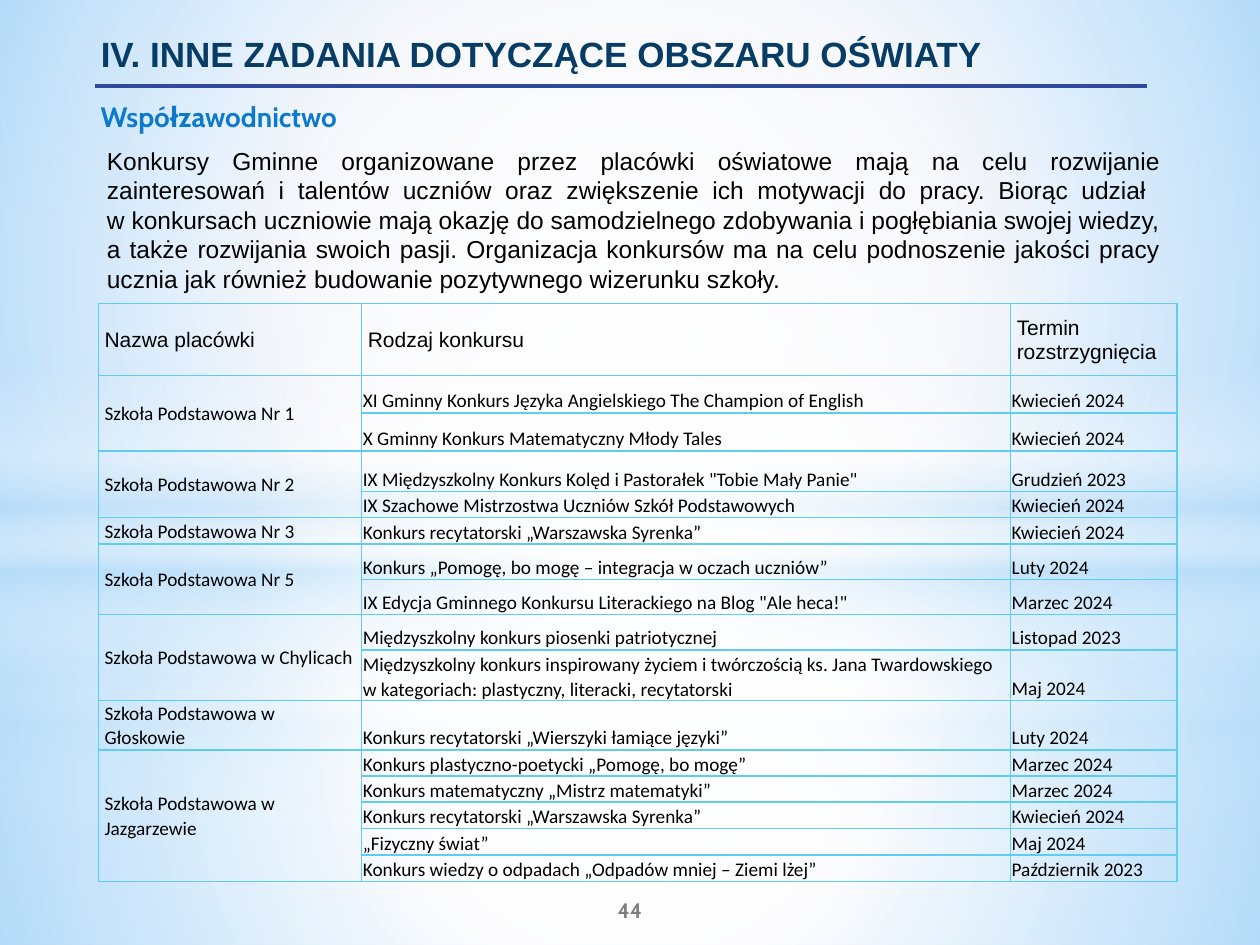
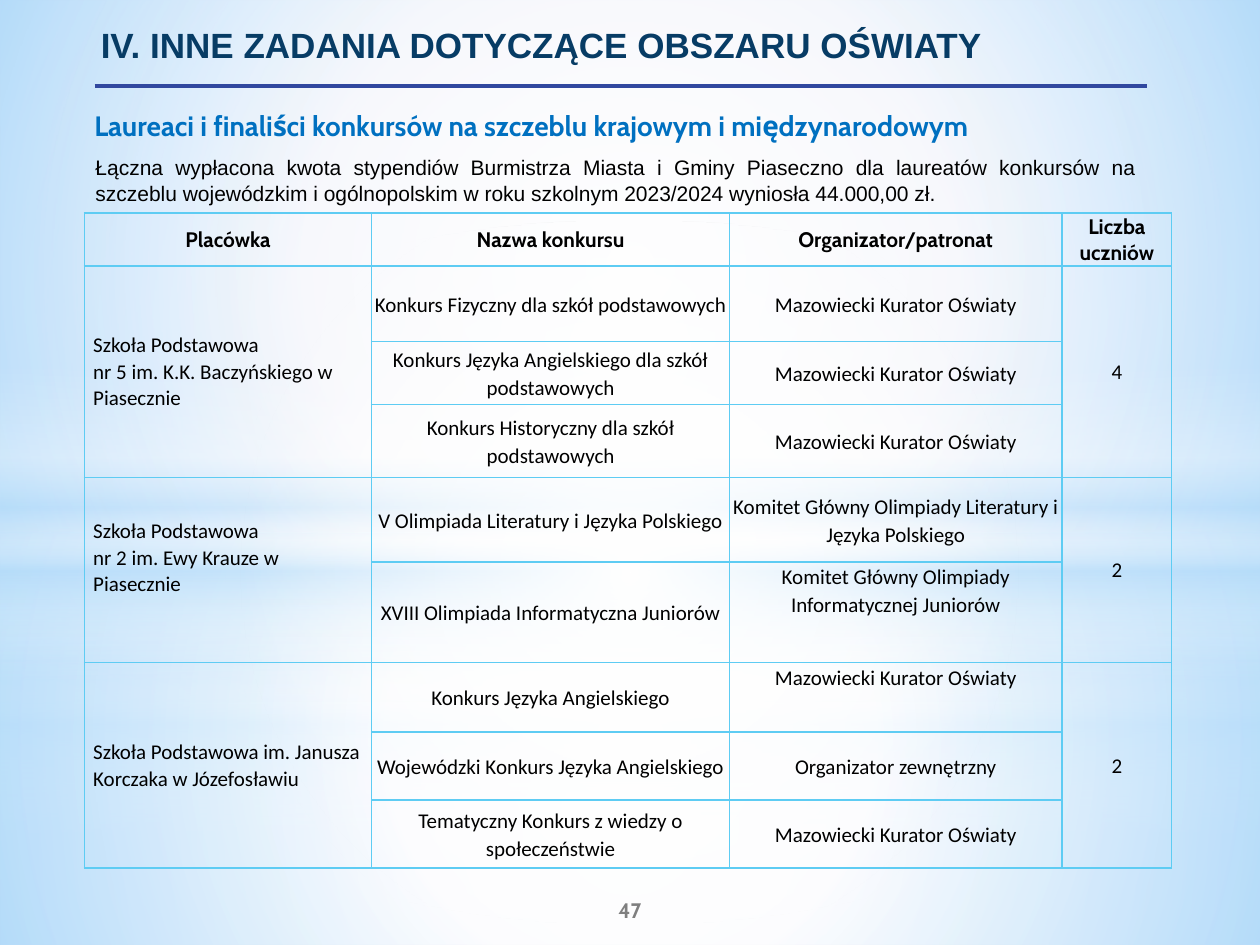
from pptx import Presentation
from pptx.dml.color import RGBColor
from pptx.enum.shapes import MSO_CONNECTOR as Connector, MSO_SHAPE as Shape
from pptx.enum.text import MSO_ANCHOR as Anchor, PP_ALIGN as Align
from pptx.oxml import parse_xml
from pptx.oxml.ns import nsdecls
from pptx.util import Inches, Pt

COLORS = {
    "base": "CAD1EE", "white": "FFFFFF", "sky": "B4DCFA", "title": "073C65",
    "rule": "31489F", "contest": "0D79CA", "laureate": "0070C0",
    "text": "000000", "number": "7F7F7F", "border": "5ECCF3",
}
TITLE = "IV. INNE ZADANIA DOTYCZĄCE OBSZARU OŚWIATY"

RADIAL = ('<a:path path="circle"><a:fillToRect l="50000" t="50000" '
          'r="50000" b="50000"/></a:path>')
LINEAR = '<a:lin ang="5400000" scaled="0"/>'
FLOOR = [(0, "white", 91), (37, "white", 76), (100, "sky", 79)]
CEILING = [(0, "white", 89), (48, "white", 62), (100, "sky", 79)]
WAVE = [(0, "white", 0), (29, "white", 30), (45, "sky", 40),
        (55, "white", 26), (65, "sky", 60), (100, "white", 0)]

LOOSE = {"side": 0.05, "spacing": 1.04}
WIDE = {"side": 0.07, "spacing": 1.04}
TIGHT = {"side": 0.01, "top": 0.01, "spacing": 1.07, "after": 8}

CONTEST_INTRO = (
    "Konkursy Gminne organizowane przez placówki oświatowe mają na celu rozwijanie "
    "zainteresowań i talentów uczniów oraz zwiększenie ich motywacji do pracy. "
    "Biorąc udział \nw konkursach uczniowie mają okazję do samodzielnego zdobywania "
    "i pogłębiania swojej wiedzy, a także rozwijania swoich pasji. Organizacja "
    "konkursów ma na celu podnoszenie jakości pracy ucznia jak również budowanie "
    "pozytywnego wizerunku szkoły.")
CONTEST_HEADER = ["Nazwa placówki", "Rodzaj konkursu", "Termin rozstrzygnięcia"]
CONTEST_HEIGHTS = [0.57, 0.3, 0.3, 0.32, 0.21, 0.21, 0.28, 0.28, 0.28, 0.4,
                   0.39, 0.19, 0.21, 0.21, 0.21, 0.21]
CONTESTS = [
    ("Szkoła Podstawowa Nr 1", [
        ("XI Gminny Konkurs Języka Angielskiego The Champion of English", "Kwiecień 2024"),
        ("X Gminny Konkurs Matematyczny Młody Tales", "Kwiecień 2024")]),
    ("Szkoła Podstawowa Nr 2", [
        ('IX Międzyszkolny Konkurs Kolęd i Pastorałek "Tobie Mały Panie"', "Grudzień 2023"),
        ("IX Szachowe Mistrzostwa Uczniów Szkół Podstawowych", "Kwiecień 2024")]),
    ("Szkoła Podstawowa Nr 3", [
        ("Konkurs recytatorski „Warszawska Syrenka”", "Kwiecień 2024")]),
    ("Szkoła Podstawowa Nr 5", [
        ("Konkurs „Pomogę, bo mogę – integracja w oczach uczniów”", "Luty 2024"),
        ('IX Edycja Gminnego Konkursu Literackiego na Blog "Ale heca!"', "Marzec 2024")]),
    ("Szkoła Podstawowa w Chylicach", [
        ("Międzyszkolny konkurs piosenki patriotycznej", "Listopad 2023"),
        ("Międzyszkolny konkurs inspirowany życiem i twórczością ks. Jana Twardowskiego "
         "w kategoriach: plastyczny, literacki, recytatorski", "Maj 2024")]),
    ("Szkoła Podstawowa w Głoskowie", [
        ("Konkurs recytatorski „Wierszyki łamiące języki”", "Luty 2024")]),
    ("Szkoła Podstawowa w Jazgarzewie", [
        ("Konkurs plastyczno-poetycki „Pomogę, bo mogę”", "Marzec 2024"),
        ("Konkurs matematyczny „Mistrz matematyki”", "Marzec 2024"),
        ("Konkurs recytatorski „Warszawska Syrenka”", "Kwiecień 2024"),
        ("„Fizyczny świat”", "Maj 2024"),
        ("Konkurs wiedzy o odpadach „Odpadów mniej – Ziemi lżej”", "Październik 2023")]),
]

LAUREATE_INTRO = (
    "Łączna wypłacona kwota stypendiów Burmistrza Miasta i Gminy Piaseczno dla "
    "laureatów konkursów na \nszczeblu wojewódzkim i ogólnopolskim w roku szkolnym "
    "2023/2024 wyniosła 44.000,00 zł.")
LAUREATE_HEADER = ["Placówka", "Nazwa konkursu", "Organizator/patronat", "Liczba uczniów"]
LAUREATE_HEIGHTS = [0.42, 0.6, 0.5, 0.58, 0.67, 0.8, 0.55, 0.54, 0.54]
CURATOR = "Mazowiecki Kurator Oświaty"
LAUREATES = [
    ("Szkoła Podstawowa\nnr 5 im. K.K. Baczyńskiego w Piasecznie", "4", 0, [
        ("Konkurs Fizyczny dla szkół podstawowych", CURATOR, Anchor.MIDDLE),
        ("Konkurs Języka Angielskiego dla szkół podstawowych", CURATOR, Anchor.MIDDLE),
        ("Konkurs Historyczny dla szkół podstawowych", CURATOR, Anchor.MIDDLE)]),
    ("Szkoła Podstawowa\nnr 2 im. Ewy Krauze w Piasecznie", "2", 0.2, [
        ("V Olimpiada Literatury i Języka Polskiego",
         "Komitet Główny Olimpiady Literatury i Języka Polskiego", Anchor.MIDDLE),
        ("XVIII Olimpiada Informatyczna Juniorów",
         "Komitet Główny Olimpiady Informatycznej Juniorów", Anchor.TOP)]),
    ("Szkoła Podstawowa im. Janusza Korczaka w Józefosławiu", "2", 0, [
        ("Konkurs Języka Angielskiego", CURATOR, Anchor.TOP),
        ("Wojewódzki Konkurs Języka Angielskiego", "Organizator zewnętrzny",
         Anchor.MIDDLE),
        ("Tematyczny Konkurs z wiedzy o społeczeństwie", CURATOR, Anchor.MIDDLE)]),
]


def rgb(name):
    """Return the named palette colour."""
    return RGBColor.from_string(COLORS[name])


def style_paragraph(para, text, size, font, color="text", bold=False, align=Align.LEFT):
    """Fill a paragraph and set its font and alignment."""
    para.text = text
    para.alignment = align
    para.font.size = Pt(size)
    para.font.name = font
    para.font.bold = bold
    para.font.color.rgb = rgb(color)


def add_text(page, box, text, size, font, anchor=Anchor.TOP, indent=0.1, **style):
    """Add a wrapping text box in the given box."""
    frame = page.shapes.add_textbox(*map(Inches, box)).text_frame
    frame.word_wrap = True
    frame.vertical_anchor = anchor
    frame.margin_left = Inches(indent)
    style_paragraph(frame.paragraphs[0], text, size, font, **style)


def add_glow(page, kind, box, stops, direction):
    """Add a borderless shape with a translucent gradient."""
    shape = page.shapes.add_shape(kind, *map(Inches, box))
    shape.shadow.inherit = False
    marks = "".join(
        f'<a:gs pos="{pos * 1000}"><a:srgbClr val="{COLORS[color]}">'
        f'<a:alpha val="{alpha * 1000}"/></a:srgbClr></a:gs>'
        for pos, color, alpha in stops)
    shape._element.spPr.insert(2, parse_xml(
        f'<a:gradFill {nsdecls("a")} rotWithShape="1">'
        f"<a:gsLst>{marks}</a:gsLst>{direction}</a:gradFill>"))
    shape.line.fill.background()


def add_backdrop(page):
    """Layer the two sets of sky glows over the page."""
    for horizon, wave_top, reach in ((5.58, 4.12, 56), (4.23, 2.9, 54)):
        add_glow(page, Shape.RECTANGLE, (0, horizon, 10, 7.5 - horizon), FLOOR, RADIAL)
        add_glow(page, Shape.RECTANGLE, (0, 0, 10, horizon), CEILING, RADIAL)
        add_glow(page, Shape.RECTANGLE, (0, wave_top, 10, 2.5), WAVE, LINEAR)
        add_glow(page, Shape.OVAL, (0, 1.75, 10, 5.58),
                 [(0, "white", 100), (reach, "white", 0)], RADIAL)


def add_page(deck, number, title_top):
    """Add a page with backdrop, number, title and rule."""
    page = deck.slides.add_slide(deck.slide_layouts[6])
    add_backdrop(page)
    add_text(page, (4, 7.02, 2, 0.4), number, 12, "Cabin", Anchor.MIDDLE,
             color="number", bold=True, align=Align.CENTER)
    add_text(page, (0.5, title_top, 9, 0.87), TITLE, 20, "Arial", indent=0.3,
             color="title", bold=True)
    rule = page.shapes.add_connector(Connector.STRAIGHT, Inches(0.75), Inches(0.68),
                                     Inches(9.1), Inches(0.68))
    rule.line.color.rgb = rgb("rule")
    rule.line.width = Pt(2.25)
    rule._element.spPr.append(parse_xml(f'<a:effectLst {nsdecls("a")}/>'))
    return page


def add_grid(page, left, top, widths, heights):
    """Add a clear table with thin borders and return it."""
    table = page.shapes.add_table(
        len(heights), len(widths), Inches(left), Inches(top),
        Inches(sum(widths)), Inches(sum(heights))).table
    table.first_row = table.horz_banding = False
    for column, width in zip(table.columns, widths):
        column.width = Inches(width)
    for row, height in zip(table.rows, heights):
        row.height = Inches(height)
    for cell in table.iter_cells():
        properties = cell._tc.get_or_add_tcPr()
        for side in "LRTB":
            properties.append(parse_xml(
                f'<a:ln{side} {nsdecls("a")} w="12700"><a:solidFill>'
                f'<a:srgbClr val="{COLORS["border"]}"/></a:solidFill></a:ln{side}>'))
        cell.fill.background()
        cell.text_frame.paragraphs[0].font.size = Pt(1)
    return table


def fill_cell(cell, text, size, font="Calibri", anchor=Anchor.MIDDLE, side=0.05, top=0,
              bottom=0, spacing=1.0, after=0, **style):
    """Write one table cell with its margins and line spacing."""
    cell.margin_left = cell.margin_right = Inches(side)
    cell.margin_top, cell.margin_bottom = Inches(top), Inches(bottom)
    cell.vertical_anchor = anchor
    para = cell.text_frame.paragraphs[0]
    style_paragraph(para, text, size, font, **style)
    para.line_spacing = spacing
    para.space_after = Pt(after)


def merge_down(table, row, column, count):
    """Join count cells downwards and return the first."""
    cell = table.cell(row, column)
    if count > 1:
        cell.merge(table.cell(row + count - 1, column))
    return cell


def build_contests(deck):
    """Build the page of municipal contests."""
    page = add_page(deck, "44", 0.21)
    add_text(page, (0.7, 0.74, 8.61, 0.37), "Współzawodnictwo", 16, "Cabin",
             color="contest", bold=True)
    add_text(page, (0.75, 1.11, 8.56, 1.55), CONTEST_INTRO, 14, "Arial",
             align=Align.JUSTIFY)
    table = add_grid(page, 0.78, 2.41, [2.09, 5.15, 1.32], CONTEST_HEIGHTS)
    for column, label in enumerate(CONTEST_HEADER):
        fill_cell(table.cell(0, column), label, 12, "Arial", **LOOSE)
    row = 1
    for school, contests in CONTESTS:
        fill_cell(merge_down(table, row, 0, len(contests)), school, 11, **LOOSE)
        for contest in contests:
            for column, text in enumerate(contest, 1):
                fill_cell(table.cell(row, column), text, 11, anchor=Anchor.BOTTOM, **TIGHT)
            row += 1


def build_laureates(deck):
    """Build the page of national and international laureates."""
    page = add_page(deck, "47", 0.14)
    add_text(page, (0.65, 0.81, 8.66, 0.37),
             "Laureaci i finaliści konkursów na szczeblu krajowym i międzynarodowym",
             16, "Cabin", color="laureate", bold=True)
    table = add_grid(page, 0.67, 1.69, [2.28, 2.84, 2.64, 0.87], LAUREATE_HEIGHTS)
    for column, label in enumerate(LAUREATE_HEADER):
        fill_cell(table.cell(0, column), label, 12, "Cabin", bold=True,
                  align=Align.CENTER, **WIDE)
    row = 1
    for school, pupils, lift, contests in LAUREATES:
        count = len(contests)
        fill_cell(merge_down(table, row, 0, count), school, 12, bottom=lift, **WIDE)
        fill_cell(merge_down(table, row, 3, count), pupils, 12, align=Align.CENTER, **WIDE)
        for contest, organizer, anchor in contests:
            fill_cell(table.cell(row, 1), contest, 12, align=Align.CENTER, **TIGHT)
            fill_cell(table.cell(row, 2), organizer, 12, anchor=anchor,
                      align=Align.CENTER, **TIGHT)
            row += 1
    add_text(page, (0.66, 1.18, 8.56, 0.5), LAUREATE_INTRO, 12, "Arial",
             align=Align.JUSTIFY)


def main():
    """Build and save the deck."""
    deck = Presentation()
    deck.slide_width, deck.slide_height = Inches(10), Inches(7.5)
    backdrop = deck.slide_master.background.fill
    backdrop.solid()
    backdrop.fore_color.rgb = rgb("base")
    build_contests(deck)
    build_laureates(deck)
    deck.save("out.pptx")


if __name__ == "__main__":
    main()
